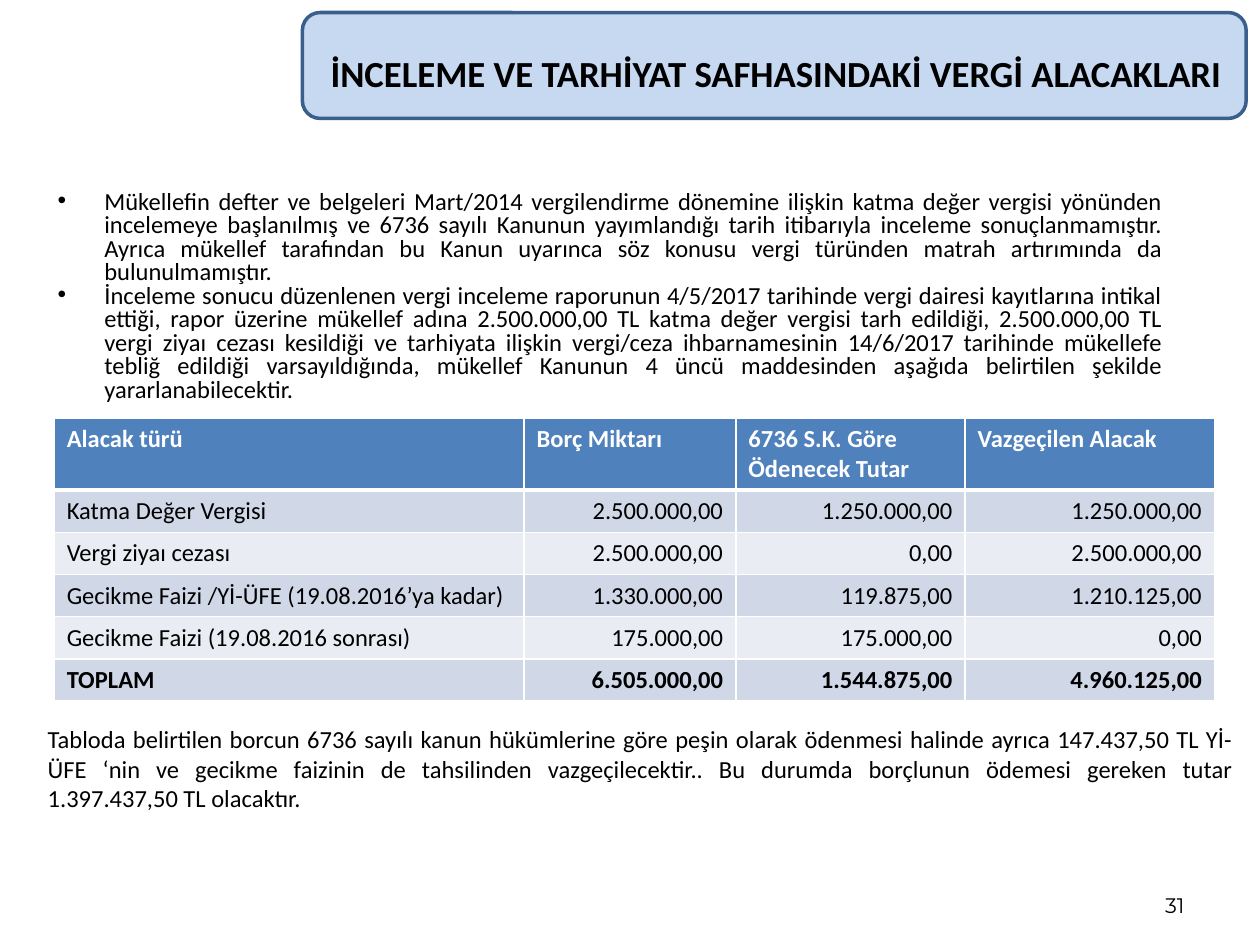
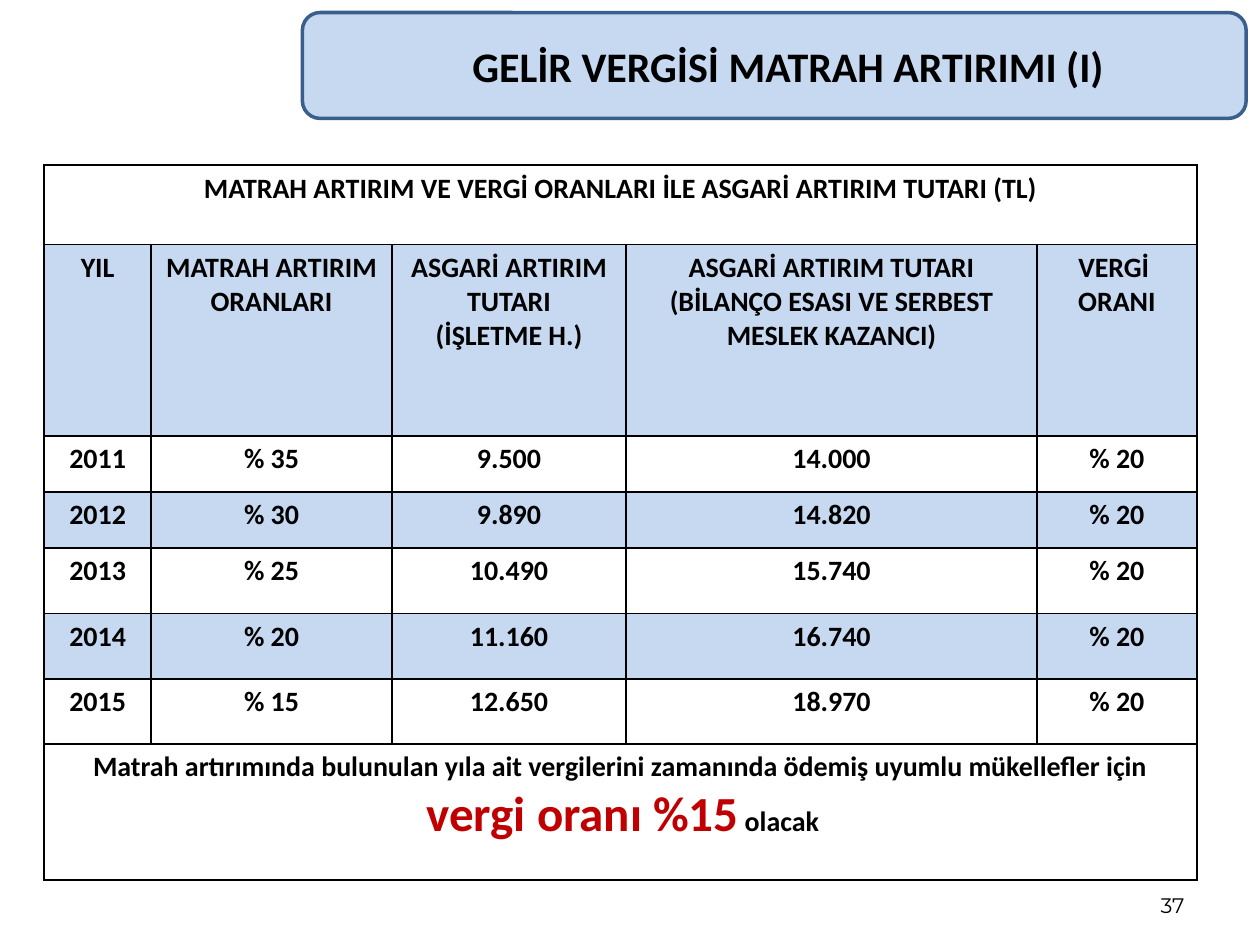
import pptx
import pptx.dml.color
import pptx.enum.shapes
import pptx.enum.text
import pptx.oxml.ns
import pptx.util
from lxml import etree

RGBColor = pptx.dml.color.RGBColor
ALIGN = pptx.enum.text.PP_ALIGN
ANCHOR = pptx.enum.text.MSO_ANCHOR

# Shared colours
BLACK = RGBColor(0x00, 0x00, 0x00)
WHITE = RGBColor(0xFF, 0xFF, 0xFF)
RED = RGBColor(0xC0, 0x00, 0x00)
PALE_BLUE = RGBColor(0xC6, 0xD9, 0xF1)
BAND_EDGE = RGBColor(0x3A, 0x5F, 0x8C)
HEADER_BLUE = RGBColor(0x4F, 0x81, 0xBD)
ROW_DARK = RGBColor(0xD0, 0xD8, 0xE7)
ROW_LIGHT = RGBColor(0xE9, 0xEC, 0xF3)

# The slide is a grid of 100 columns by 75 rows
COLUMNS, ROWS = 100, 75
BODY_FONT, NUMBER_FONT = "Calibri", "Montserrat"


class Deck:
    def __init__(self):
        self.presentation = pptx.Presentation()
        self.presentation.slide_width = pptx.util.Inches(10)
        self.presentation.slide_height = pptx.util.Inches(7.5)
        self.slide = None

    def across(self, columns):
        return int(self.presentation.slide_width * columns / COLUMNS)

    def down(self, rows):
        return int(self.presentation.slide_height * rows / ROWS)

    def place(self, left, top, width, height):
        return self.across(left), self.down(top), self.across(width), self.down(height)

    def new_slide(self, title, title_place, title_size, number, title_anchor, title_wrap):
        """Start a slide with its title band, title and page number."""
        self.slide = self.presentation.slides.add_slide(self.presentation.slide_layouts[6])
        band = self.slide.shapes.add_shape(
            pptx.enum.shapes.MSO_SHAPE.ROUNDED_RECTANGLE, *self.place(24, 1, 74.9, 8.4))
        band.shadow.inherit = False
        band.fill.solid()
        band.fill.fore_color.rgb = PALE_BLUE
        band.line.color.rgb = BAND_EDGE
        band.line.width = pptx.util.Pt(2)
        self.text(title_place, [title], title_size, ALIGN.CENTER, bold=True,
                  anchor=title_anchor, wrap=title_wrap)
        self.text((71.7, 68.3, 23.3, 5), [number], 12, ALIGN.RIGHT,
                  font=NUMBER_FONT, anchor=ANCHOR.BOTTOM)

    def fill_frame(self, frame, paragraphs, size, align, color=BLACK, bold=False,
                   font=BODY_FONT, bullet=False):
        """Fill a frame; a paragraph is a string or a list of (text, size, colour)."""
        for index, content in enumerate(paragraphs):
            paragraph = frame.paragraphs[0] if index == 0 else frame.add_paragraph()
            paragraph.alignment = align
            if bullet:
                self.bullet(paragraph)
            runs = [(content, size, color)] if isinstance(content, str) else content
            for text, run_size, run_color in runs:
                run = paragraph.add_run()
                run.text = text
                run.font.name = font
                run.font.size = pptx.util.Pt(run_size)
                run.font.bold = bold
                run.font.color.rgb = run_color

    def bullet(self, paragraph):
        properties = paragraph._p.get_or_add_pPr()
        properties.set("marL", str(pptx.util.Inches(0.38)))
        properties.set("indent", str(pptx.util.Inches(-0.37)))
        mark_font = etree.SubElement(properties, pptx.oxml.ns.qn("a:buFont"))
        mark_font.set("typeface", "Arial")
        etree.SubElement(properties, pptx.oxml.ns.qn("a:buChar")).set("char", "•")
        paragraph.line_spacing = 0.8

    def text(self, place, paragraphs, size, align, anchor=ANCHOR.TOP, wrap=True, **style):
        frame = self.slide.shapes.add_textbox(*self.place(*place)).text_frame
        frame.word_wrap = wrap
        frame.vertical_anchor = anchor
        self.fill_frame(frame, paragraphs, size, align, **style)

    def table(self, left, top, widths, heights):
        frame = self.slide.shapes.add_table(
            len(heights), len(widths),
            *self.place(left, top, sum(widths), sum(heights)))
        table = frame.table
        table.first_row = table.horz_banding = False
        for column, width in zip(table.columns, widths):
            column.width = self.across(width)
        for row, height in zip(table.rows, heights):
            row.height = self.down(height)
        return table

    def cell(self, cell, paragraphs, size, align, fill, border, top=0.96, bottom=0.96, **style):
        if fill is None:
            cell.fill.background()
        else:
            cell.fill.solid()
            cell.fill.fore_color.rgb = fill
        properties = cell._tc.get_or_add_tcPr()
        edges = {"L": 0.96, "R": 0.96, "T": top, "B": bottom}
        for index, (side, width) in enumerate(edges.items()):
            line = etree.Element(pptx.oxml.ns.qn(f"a:ln{side}"), w=str(pptx.util.Pt(width)))
            solid = etree.SubElement(line, pptx.oxml.ns.qn("a:solidFill"))
            etree.SubElement(solid, pptx.oxml.ns.qn("a:srgbClr")).set("val", str(border))
            properties.insert(index, line)
        self.fill_frame(cell.text_frame, paragraphs, size, align, **style)


def receivables_slide(deck):
    deck.new_slide("İNCELEME VE TARHİYAT SAFHASINDAKİ VERGİ ALACAKLARI",
                   (25.2, 3.5, 72.8, 4.5), 21, "31", ANCHOR.TOP, False)

    # Case description
    deck.text((3.5, 14.7, 89.8, 18), [
        "Mükellefin defter ve belgeleri Mart/2014 vergilendirme dönemine ilişkin katma değer "
        "vergisi yönünden incelemeye başlanılmış ve 6736 sayılı Kanunun yayımlandığı tarih "
        "itibarıyla inceleme sonuçlanmamıştır. Ayrıca mükellef tarafından bu Kanun uyarınca söz "
        "konusu vergi türünden matrah artırımında da bulunulmamıştır.",
        "İnceleme sonucu düzenlenen vergi inceleme raporunun 4/5/2017 tarihinde vergi dairesi "
        "kayıtlarına intikal ettiği, rapor üzerine mükellef adına 2.500.000,00 TL katma değer "
        "vergisi tarh edildiği, 2.500.000,00 TL vergi ziyaı cezası kesildiği ve tarhiyata ilişkin "
        "vergi/ceza ihbarnamesinin 14/6/2017 tarihinde mükellefe tebliğ edildiği "
        "varsayıldığında, mükellef Kanunun 4 üncü maddesinden aşağıda belirtilen şekilde "
        "yararlanabilecektir.",
    ], 14, ALIGN.JUSTIFY, bullet=True)

    # Receivables table
    receivables = [
        ("Alacak türü", "Borç Miktarı", "6736 S.K. Göre Ödenecek Tutar", "Vazgeçilen Alacak"),
        ("Katma Değer Vergisi", "2.500.000,00", "1.250.000,00", "1.250.000,00"),
        ("Vergi ziyaı cezası", "2.500.000,00", "0,00", "2.500.000,00"),
        ("Gecikme Faizi /Yİ-ÜFE (19.08.2016’ya kadar)",
         "1.330.000,00", "119.875,00", "1.210.125,00"),
        ("Gecikme Faizi (19.08.2016 sonrası)", "175.000,00", "175.000,00", "0,00"),
        ("TOPLAM", "6.505.000,00", "1.544.875,00", "4.960.125,00"),
    ]
    last = len(receivables) - 1
    table = deck.table(4.3, 33.2, [37.3, 16.8, 18.2, 19.8], [5.7] + [3.35] * last)
    for r, values in enumerate(receivables):
        header = r == 0
        fill = HEADER_BLUE if header else ROW_DARK if r % 2 else ROW_LIGHT
        for c, value in enumerate(values):
            deck.cell(table.cell(r, c), [value], 14,
                      ALIGN.LEFT if header or c == 0 else ALIGN.RIGHT, fill, WHITE,
                      top=3 if r == 1 else 0.96, bottom=3 if header else 0.96,
                      color=WHITE if header else BLACK, bold=r in (0, last))

    # Closing note
    deck.text((2.8, 57, 96.1, 9.9), [
        "Tabloda belirtilen borcun 6736 sayılı kanun hükümlerine göre peşin olarak ödenmesi "
        "halinde ayrıca 147.437,50 TL Yİ-ÜFE ‘nin ve gecikme faizinin de tahsilinden "
        "vazgeçilecektir.. Bu durumda borçlunun ödemesi gereken tutar 1.397.437,50 TL olacaktır.",
    ], 14, ALIGN.JUSTIFY)


def base_increase_slide(deck):
    deck.new_slide("GELİR VERGİSİ MATRAH ARTIRIMI (I)",
                   (27.9, 2.1, 69.3, 6.3), 24, "37", ANCHOR.MIDDLE, True)

    # Rates table: caption, headings, one row a year, closing remark
    caption = ["MATRAH ARTIRIM VE VERGİ ORANLARI İLE ASGARİ ARTIRIM TUTARI (TL)"]
    headings = [
        ["YIL"],
        ["MATRAH ARTIRIM ORANLARI"],
        ["ASGARİ ARTIRIM TUTARI", "(İŞLETME H.)"],
        ["ASGARİ ARTIRIM TUTARI", "(BİLANÇO ESASI VE SERBEST MESLEK KAZANCI)"],
        ["VERGİ ", "ORANI"],
    ]
    years = [
        ("2011", "% 35", "9.500", "14.000"),
        ("2012", "% 30", "9.890", "14.820"),
        ("2013", "% 25", "10.490", "15.740"),
        ("2014", "% 20", "11.160", "16.740"),
        ("2015", "% 15", "12.650", "18.970"),
    ]
    remark = [
        "Matrah artırımında bulunulan yıla ait vergilerini zamanında ödemiş uyumlu "
        "mükellefler için",
        [(" vergi oranı %15", 28, RED), (" olacak ", 16, BLACK)],
    ]
    year_rows = [[[value] for value in (*year, "% 20")] for year in years]
    rows = [[caption], headings, *year_rows, [remark]]
    table = deck.table(3.5, 13.1, [8.5, 19.1, 18.6, 32.6, 12.7],
                       [6.3, 15.2, 4.45, 4.45, 5.2, 5.2, 5.15, 10.8])
    last_column = len(headings) - 1
    for r, cells in enumerate(rows):
        fill = PALE_BLUE if r % 2 and len(cells) > 1 else None
        if len(cells) == 1:
            table.cell(r, 0).merge(table.cell(r, last_column))
        for c in range(last_column + 1):
            paragraphs = cells[c] if c < len(cells) else []
            deck.cell(table.cell(r, c), paragraphs, 16, ALIGN.CENTER, fill, BLACK, bold=True)


def main():
    deck = Deck()
    receivables_slide(deck)
    base_increase_slide(deck)
    deck.presentation.save("out.pptx")


if __name__ == "__main__":
    main()
